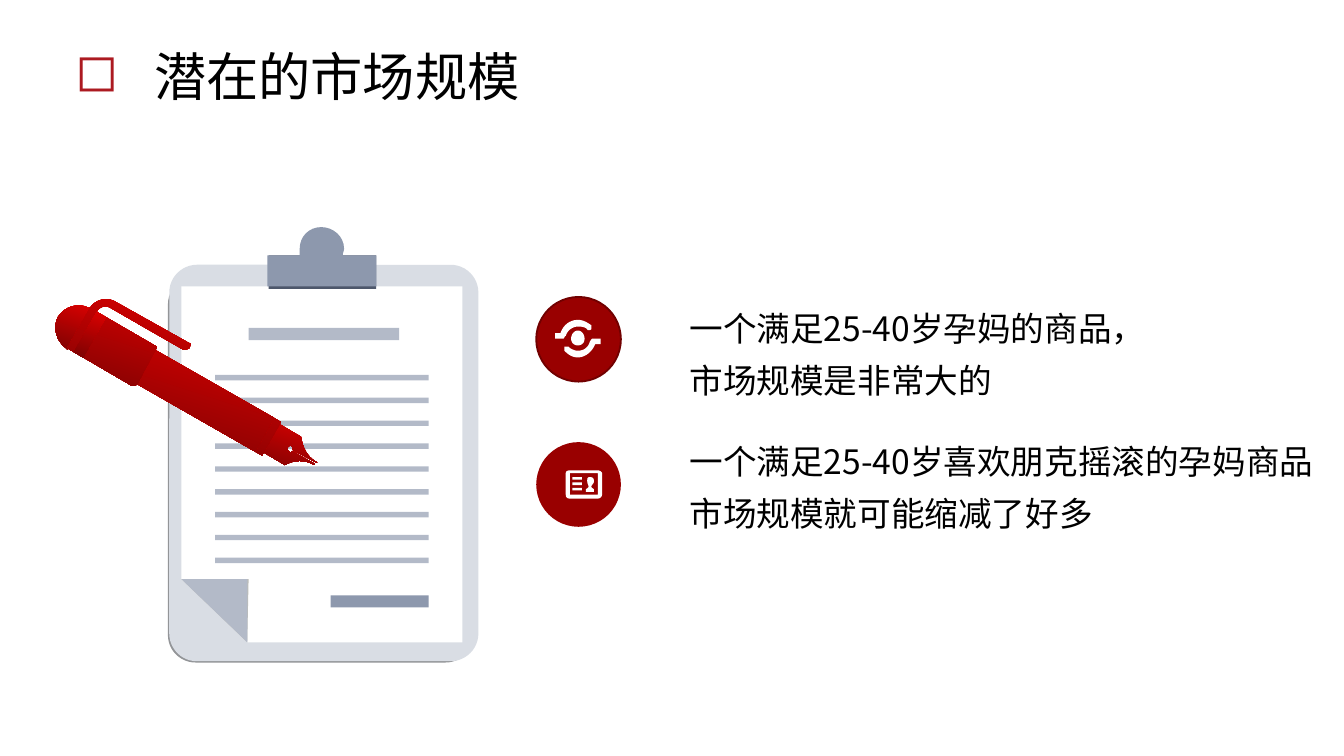
import math
import pptx
import pptx.dml.color
import pptx.enum.shapes
import pptx.enum.text
import pptx.oxml
import pptx.oxml.ns
import pptx.util
from pptx.util import Inches

COLORS = {
    "black": "000000", "white": "FFFFFF", "badge": "990000", "badge_rim": "710000",
    "bullet": "AC1A21", "pen_light": "E30000", "pen_dark": "760303",
    "board": "D9DDE4", "board_shade": "939598", "clip": "8D98AD",
    "clip_shade": "4D576B", "rule": "B3BAC8", "fold_shade": "BCBCB8",
}
RGB = {name: pptx.dml.color.RGBColor.from_string(value) for name, value in COLORS.items()}
FONT = "Noto Sans CJK SC"
KINDS = pptx.enum.shapes.MSO_SHAPE

presentation = pptx.Presentation()
presentation.slide_width = Inches(10)
presentation.slide_height = Inches(10 * 9 / 16)
slide = presentation.slides.add_slide(presentation.slide_layouts[5])


def add_preset(kind, left, top, width, height, color):
    shape = slide.shapes.add_shape(kind, *map(Inches, (left, top, width, height)))
    shape.shadow.inherit = False
    shape.fill.solid()
    shape.fill.fore_color.rgb = RGB[color]
    shape.line.fill.background()
    return shape


def add_outline(contours, color=None, tilt=0):
    """Pairs are corners, sextuples Bezier curves; no colour means the pen gradient."""
    pivot_x, pivot_y = contours[0][0]
    cos, sin = math.cos(math.radians(tilt)), math.sin(math.radians(tilt))
    builder = None
    for contour in contours:
        points = []
        for item in contour:
            if len(item) == 2:
                points.append(item)
                continue
            controls = [points[-1], item[:2], item[2:4], item[4:]]
            for step in range(1, 9):
                t = step / 8
                weights = [math.comb(3, k) * t**k * (1 - t)**(3 - k) for k in range(4)]
                points.append([sum(w * c[axis] for w, c in zip(weights, controls))
                               for axis in (0, 1)])
        # Turn back by the tilt, so that the shape's rotation restores the outline
        turned = [(Inches(pivot_x + (x - pivot_x) * cos + (y - pivot_y) * sin),
                   Inches(pivot_y - (x - pivot_x) * sin + (y - pivot_y) * cos))
                  for x, y in points]
        if builder is None:
            builder = slide.shapes.build_freeform(*turned[0])
        else:
            builder.move_to(*turned[0])
        builder.add_line_segments(turned[1:], close=True)
    shape = builder.convert_to_shape()
    offset_x = shape.left + shape.width / 2 - Inches(pivot_x)
    offset_y = shape.top + shape.height / 2 - Inches(pivot_y)
    shape.left += round(offset_x * cos - offset_y * sin - offset_x)
    shape.top += round(offset_x * sin + offset_y * cos - offset_y)
    shape.rotation = tilt
    shape.shadow.inherit = False
    shape.line.fill.background()
    if color:
        shape.fill.solid()
        shape.fill.fore_color.rgb = RGB[color]
    else:
        shape.fill.gradient()
        shape.fill.gradient_angle = 270
        for stop, name in zip(shape.fill.gradient_stops, ("pen_light", "pen_dark")):
            stop.color.rgb = RGB[name]


# Clipboard and paper
for box, color in (((1.25, 2.06, 2.27, 2.87), "board_shade"), ((1.26, 1.97, 2.3, 2.95), "board")):
    board = add_preset(KINDS.ROUNDED_RECTANGLE, *box, color)
    board.adjustments[0] = 0.09
add_outline([[(1.84, 4.78), (3.44, 4.78), (3.44, 2.13), (1.35, 2.13), (1.35, 4.31)]], "white")

# Heading, ruled lines and signature
add_preset(KINDS.RECTANGLE, 2.46, 4.43, 0.73, 0.09, "clip")
for row in range(9):
    add_preset(KINDS.RECTANGLE, 1.6, 2.79 + 0.17 * row, 1.59, 0.04, "rule")
add_preset(KINDS.RECTANGLE, 1.85, 2.44, 1.12, 0.09, "rule")

# Folded corner
add_outline([[(1.85, 4.31), (1.35, 4.31), (1.84, 4.78)]], "fold_shade")
add_outline([[(1.84, 4.31), (1.35, 4.31), (1.84, 4.78)]], "rule")

# Clip
add_preset(KINDS.RECTANGLE, 2, 1.9, 0.8, 0.25, "clip_shade")
add_outline([[(2.55, 1.9), (2.55, 1.88, 2.56, 1.87, 2.56, 1.85),
              (2.56, 1.76, 2.48, 1.69, 2.39, 1.69), (2.3, 1.69, 2.23, 1.76, 2.23, 1.85),
              (2.23, 1.87, 2.23, 1.88, 2.23, 1.9),
              (1.99, 1.9), (1.99, 2.13), (2.8, 2.13), (2.8, 1.9)]], "clip")
add_preset(KINDS.OVAL, 2.3, 1.76, 0.2, 0.2, "clip")

# Pen: nib, barrel shade, barrel, end, cap with clip, ring
pen_parts = [
    [(1.96, 3.23), (1.9, 3.33), (2.12, 3.46), (2.19, 3.42, 2.27, 3.42, 2.34, 3.46),
     (2.34, 3.45), (2.18, 3.36), (2.17, 3.36, 2.16, 3.37, 2.15, 3.36),
     (2.14, 3.35, 2.14, 3.34, 2.14, 3.33), (2.15, 3.32, 2.16, 3.31, 2.17, 3.32),
     (2.18, 3.33, 2.18, 3.34, 2.18, 3.35), (2.35, 3.44), (2.36, 3.44),
     (2.28, 3.4, 2.25, 3.32, 2.24, 3.25), (2.02, 3.12)],
    [(2.09, 3.14), (1.95, 3.39), (0.76, 2.71), (0.9, 2.46)],
    [(2.04, 3.11), (1.9, 3.36), (0.71, 2.68), (0.85, 2.43)],
    [(0.49, 2.59), (0.5, 2.6), (0.67, 2.29), (0.66, 2.29),
     (0.58, 2.25, 0.48, 2.28, 0.43, 2.36), (0.39, 2.44, 0.42, 2.54, 0.49, 2.59)],
    [(0.67, 2.29), (0.5, 2.59), (0.98, 2.87), (1, 2.87, 1.01, 2.87, 1.02, 2.86),
     (1.16, 2.6), (1.17, 2.59, 1.17, 2.58, 1.15, 2.57), (0.72, 2.32),
     (0.74, 2.28, 0.79, 2.27, 0.82, 2.29), (1.36, 2.6),
     (1.38, 2.6, 1.4, 2.6, 1.41, 2.59), (1.42, 2.56), (0.85, 2.24),
     (0.79, 2.21, 0.71, 2.23, 0.67, 2.29)],
    [(0.62, 2.66), (0.79, 2.36), (0.72, 2.32), (0.55, 2.62)],
]
for part in pen_parts:
    add_outline([part], tilt=18)

# Round badges
badge = add_preset(KINDS.OVAL, 3.99, 2.21, 0.63, 0.63, "badge")
badge.line.color.rgb = RGB["badge_rim"]
badge.line.width = pptx.util.Pt(1)
add_preset(KINDS.OVAL, 3.99, 3.29, 0.63, 0.63, "badge")

# Orbit icon: centre, upper arm, lower arm
add_outline([
    [(4.25, 2.52), (4.25, 2.55, 4.27, 2.57, 4.3, 2.57), (4.33, 2.57, 4.35, 2.55, 4.35, 2.52),
     (4.35, 2.49, 4.33, 2.46, 4.3, 2.46), (4.27, 2.46, 4.25, 2.49, 4.25, 2.52)],
    [(4.21, 2.5), (4.22, 2.46, 4.26, 2.43, 4.3, 2.43), (4.32, 2.43, 4.35, 2.43, 4.37, 2.45),
     (4.37, 2.46, 4.39, 2.46, 4.4, 2.45), (4.4, 2.44, 4.4, 2.43, 4.4, 2.42),
     (4.37, 2.4, 4.34, 2.38, 4.3, 2.38), (4.24, 2.38, 4.19, 2.42, 4.17, 2.48),
     (4.13, 2.48), (4.13, 2.52), (4.19, 2.52), (4.2, 2.52, 4.2, 2.5, 4.21, 2.5)],
    [(4.41, 2.52), (4.4, 2.52, 4.4, 2.53, 4.39, 2.54), (4.38, 2.58, 4.35, 2.61, 4.3, 2.61),
     (4.28, 2.61, 4.25, 2.6, 4.23, 2.58), (4.23, 2.58, 4.21, 2.58, 4.2, 2.58),
     (4.2, 2.59, 4.2, 2.61, 4.2, 2.61), (4.23, 2.64, 4.26, 2.66, 4.3, 2.66),
     (4.36, 2.66, 4.41, 2.61, 4.43, 2.56), (4.47, 2.56), (4.47, 2.52)],
], "white")

# Identity card icon: frame, window, text bars, person
card_bars = [[(4.26, y), (4.33, y), (4.33, y + 0.02), (4.26, y + 0.02)]
             for y in (3.55, 3.59, 3.63)]
add_outline([
    [(4.45, 3.5), (4.24, 3.5), (4.22, 3.5, 4.21, 3.51, 4.21, 3.52), (4.21, 3.68),
     (4.21, 3.7, 4.22, 3.71, 4.24, 3.71), (4.45, 3.71),
     (4.46, 3.71, 4.48, 3.7, 4.48, 3.68), (4.48, 3.52),
     (4.48, 3.51, 4.46, 3.5, 4.45, 3.5)],
    [(4.45, 3.68), (4.24, 3.68), (4.24, 3.52), (4.45, 3.52)],
    *card_bars,
    [(4.42, 3.64), (4.42, 3.64, 4.4, 3.63, 4.4, 3.62), (4.4, 3.61, 4.42, 3.6, 4.42, 3.58),
     (4.42, 3.56, 4.41, 3.55, 4.39, 3.55), (4.37, 3.55, 4.37, 3.56, 4.37, 3.58),
     (4.37, 3.6, 4.38, 3.61, 4.38, 3.62), (4.38, 3.63, 4.36, 3.64, 4.36, 3.64),
     (4.36, 3.66), (4.42, 3.66)],
], "white")

# Title with a square bullet
title = slide.shapes.title
title.left, title.top, title.width, title.height = map(Inches, (0.46, 0.28, 5.53, 0.57))
title.text_frame.vertical_anchor = pptx.enum.text.MSO_ANCHOR.TOP
paragraph = title.text_frame.paragraphs[0]
paragraph.alignment = pptx.enum.text.PP_ALIGN.LEFT
properties = paragraph._p.get_or_add_pPr()
properties.set("marL", str(Inches(0.5)))
properties.set("indent", str(-Inches(0.5)))
namespace = pptx.oxml.ns.nsdecls("a")
for xml in (f'<a:buClr {namespace}><a:srgbClr val="{COLORS["bullet"]}"/></a:buClr>',
            f'<a:buChar {namespace} char="◻"/>'):
    properties.append(pptx.oxml.parse_xml(xml))
text_runs = [(paragraph, " 潜在的市场规模", 28)]

# Statements beside the badges
for top, width, height, lines in (
    (3.15, 4.28, 0.86, ("一个满足25-40岁喜欢朋克摇滚的孕妈商品", "市场规模就可能缩减了好多")),
    (2.16, 4.45, 0.38, ("一个满足25-40岁孕妈的商品，", "市场规模是非常大的")),
):
    frame = slide.shapes.add_textbox(*map(Inches, (5.06, top, width, height))).text_frame
    frame.word_wrap = False
    frame.auto_size = pptx.enum.text.MSO_AUTO_SIZE.NONE
    frame.margin_left = frame.margin_right = Inches(0.07)
    frame.margin_top, frame.margin_bottom = Inches(0.04), 0
    for index, line in enumerate(lines):
        paragraph = frame.add_paragraph() if index else frame.paragraphs[0]
        paragraph.line_spacing = 1.3
        text_runs.append((paragraph, line, 18))

for paragraph, text, size in text_runs:
    run = paragraph.add_run()
    run.text = text
    run.font.size = pptx.util.Pt(size)
    run.font.name = FONT
    run.font.color.rgb = RGB["black"]
    run.font._element.append(pptx.oxml.parse_xml(f'<a:ea {namespace} typeface="{FONT}"/>'))

presentation.save("out.pptx")
